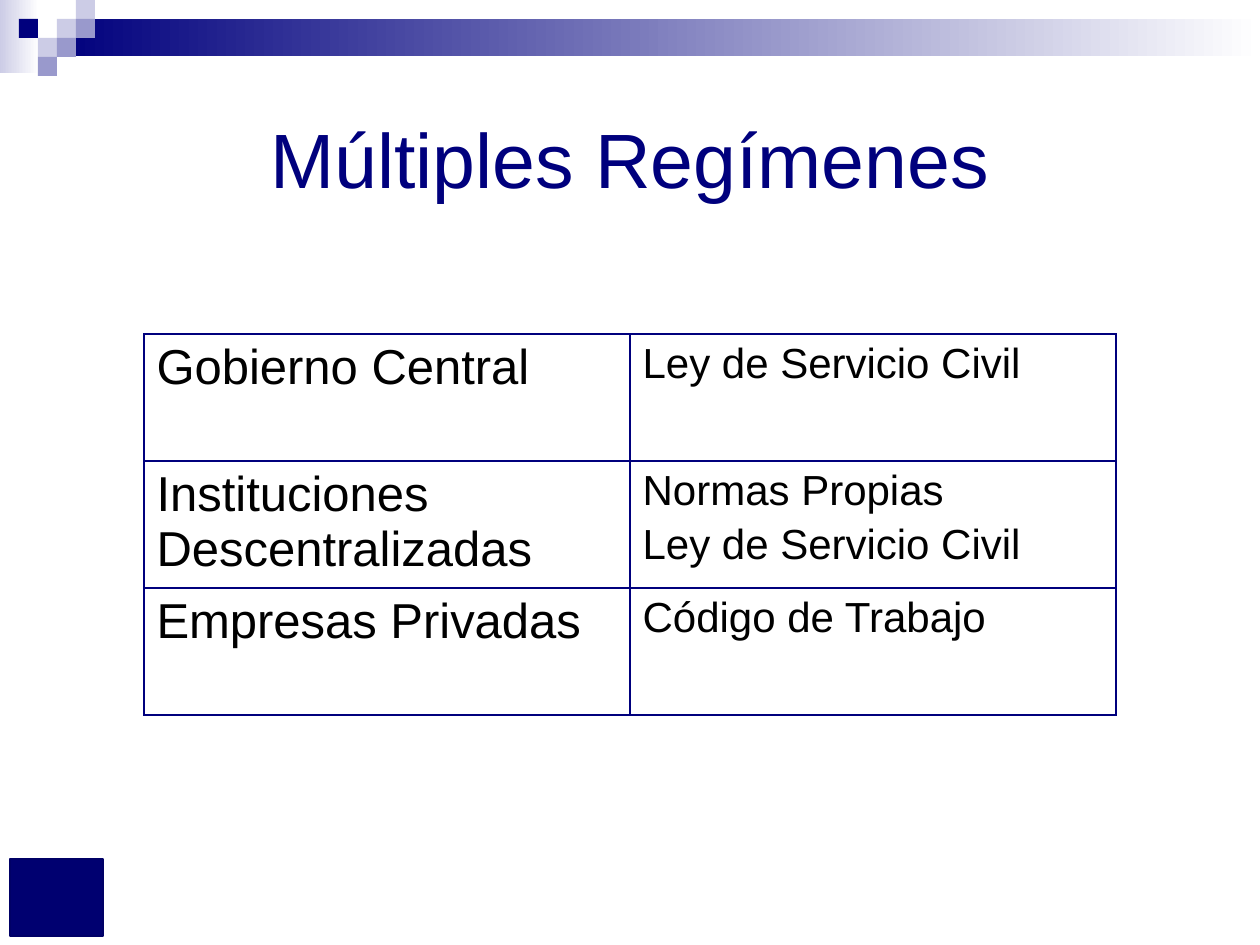
from lxml import etree
from pptx import Presentation
from pptx.dml.color import RGBColor
from pptx.enum import shapes, text
from pptx.oxml import ns
from pptx.util import Emu, Pt

EMU_PER_PX = 914400 / 126
COLORS = {
    "navy": "00007D",
    "badge": "000070",
    "badge_edge": "000066",
    "lilac": "CCCCE6",
    "violet": "9999CC",
    "white": "FFFFFF",
    "black": "000000",
}
TILE = 19
TILES = [
    (3, 1, "lilac"),
    (4, 0, "lilac"),
    (4, 1, "violet"),
    (2, 2, "lilac"),
    (1, 1, "navy"),
    (3, 2, "violet"),
    (2, 3, "violet"),
]
REGIMES = [
    ("Gobierno Central", ["Ley de Servicio Civil"]),
    ("Instituciones Descentralizadas", ["Normas Propias", "Ley de Servicio Civil"]),
    ("Empresas Privadas", ["Código de Trabajo"]),
]


def px(length):
    return Emu(round(length * EMU_PER_PX))


def rgb(name):
    return RGBColor.from_string(COLORS[name])


def write(frame, lines, size, color="black", align=text.PP_ALIGN.LEFT, gap=0):
    for index, line in enumerate(lines):
        paragraph = frame.add_paragraph() if index else frame.paragraphs[0]
        paragraph.alignment = align
        paragraph.space_before = Pt(gap if index else 0)
        run = paragraph.add_run()
        run.text = line
        run.font.name = "Arial"
        run.font.size = Pt(size)
        run.font.bold = False
        run.font.color.rgb = rgb(color)


def add_block(slide, left, top, width, height, *colors, edge=None):
    block = slide.shapes.add_shape(
        shapes.MSO_SHAPE.RECTANGLE, px(left), px(top), px(width), px(height)
    )
    block.shadow.inherit = False
    if len(colors) > 1:
        block.fill.gradient()
        block.fill.gradient_angle = 0
        for stop, color in zip(block.fill.gradient_stops, colors):
            stop.color.rgb = rgb(color)
    else:
        block.fill.solid()
        block.fill.fore_color.rgb = rgb(colors[0])
    if edge:
        block.line.color.rgb = rgb(edge)
        block.line.width = Pt(1)
    else:
        block.line.fill.background()


def add_borders(cell, color):
    properties = cell._tc.get_or_add_tcPr()
    for index, side in enumerate(("lnL", "lnR", "lnT", "lnB")):
        border = etree.Element(ns.qn(f"a:{side}"), w=str(int(Pt(1))))
        fill = etree.SubElement(border, ns.qn("a:solidFill"))
        etree.SubElement(fill, ns.qn("a:srgbClr"), val=COLORS[color])
        properties.insert(index, border)


def add_decoration(slide):
    add_block(slide, 0, 0, 39, 73, "lilac", "white")
    add_block(slide, 57, 19, 1203, 37, "navy", "white")
    for column, row, color in TILES:
        add_block(slide, column * TILE, row * TILE, TILE, TILE, color)
    add_block(slide, 10, 859, 93, 77, "badge", edge="badge_edge")


def add_title(slide, wording):
    title = slide.shapes.title
    title.left, title.top, title.width, title.height = map(px, (63, 63, 1134, 189))
    title.text_frame.vertical_anchor = text.MSO_ANCHOR.MIDDLE
    write(title.text_frame, [wording], 44, "navy", text.PP_ALIGN.CENTER)


def add_regimes(slide):
    table = slide.shapes.add_table(
        len(REGIMES), 2, px(144), px(334), px(972), px(381)
    ).table
    table.first_row = False
    table.horz_banding = False
    for row, (sector, rules) in zip(table.rows, REGIMES):
        for cell, lines, size in zip(row.cells, ([sector], rules), (28, 24)):
            cell.fill.background()
            add_borders(cell, "navy")
            write(cell.text_frame, lines, size, gap=4)


def main():
    deck = Presentation()
    deck.slide_width, deck.slide_height = px(1260), px(945)
    slide = deck.slides.add_slide(deck.slide_layouts[5])
    add_decoration(slide)
    add_title(slide, "Múltiples Regímenes")
    add_regimes(slide)
    deck.save("out.pptx")


if __name__ == "__main__":
    main()
